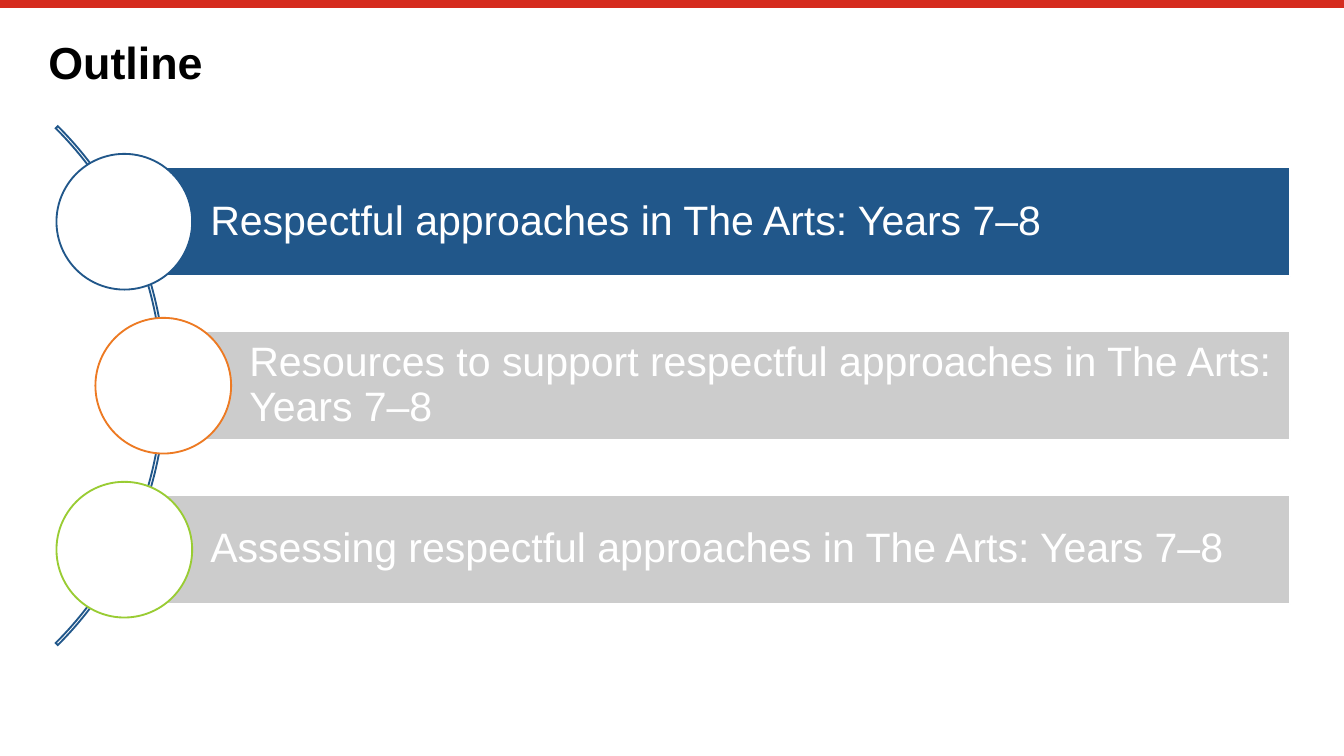
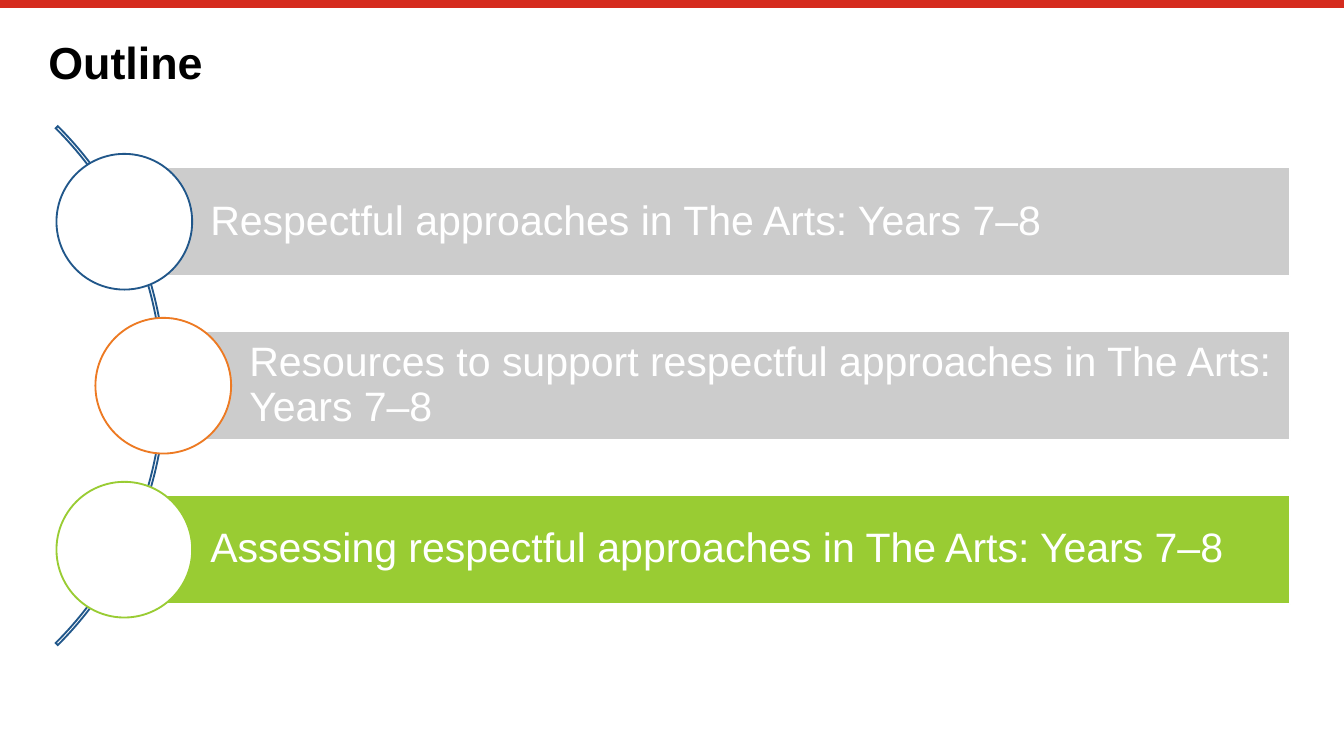
from pptx import Presentation
from pptx.dml.color import RGBColor
from pptx.enum import shapes, text
from pptx.oxml import ns, xmlchemy
from pptx.util import Inches, Pt

RED, BLUE, ORANGE, GREEN = "D52B1E", "21578A", "ED7A23", "99CC33"
GREY, WHITE, BLACK = "CCCCCC", "FFFFFF", "000000"

TOPICS = [
    ("Respectful approaches in The Arts: Years 7–8", BLUE, 0.42),
    ("Resources to support respectful approaches in The Arts: Years 7–8", ORANGE, 0.71),
    ("Assessing respectful approaches in The Arts: Years 7–8", GREEN, 0.42),
]
ACTIVE_TOPICS = [0, 2]
CIRCLE = 1.01
BAR_HEIGHT = 0.81
BAR_RIGHT = 9.6
FIRST_CENTRE = 1.65
PITCH = 1.22


def write(box, words, size, color, bold=False, insets=(0, 0, 0, 0), anchor=text.MSO_ANCHOR.TOP):
    frame = box.text_frame
    frame.word_wrap = True
    frame.vertical_anchor = anchor
    frame.margin_left, frame.margin_top, frame.margin_right, frame.margin_bottom = map(Inches, insets)
    line = frame.paragraphs[0]
    line.text = words
    line.alignment = text.PP_ALIGN.LEFT
    line.line_spacing = 0.9
    line.font.name = "Arial"
    line.font.size = Pt(size)
    line.font.bold = bold
    line.font.color.rgb = RGBColor.from_string(color)


def draw(slide, kind, left, top, width, height, fill, outline):
    shape = slide.shapes.add_shape(kind, *map(Inches, (left, top, width, height)))
    shape.shadow.inherit = False
    if fill:
        shape.fill.solid()
        shape.fill.fore_color.rgb = RGBColor.from_string(fill)
    else:
        shape.fill.background()
    shape.line.color.rgb = RGBColor.from_string(outline)
    shape.line.width = Pt(1)
    return shape


deck = Presentation()
deck.slide_width = Inches(10)
deck.slide_height = deck.slide_width * 9 // 16

for active in ACTIVE_TOPICS:
    slide = deck.slides.add_slide(deck.slide_layouts[6])

    band = slide.shapes.add_connector(
        shapes.MSO_CONNECTOR.STRAIGHT, 0, Inches(0.03), Inches(10), Inches(0.03))
    band.line.color.rgb = RGBColor.from_string(RED)
    band.line.width = Pt(4.2)
    band.element.spPr.append(xmlchemy.OxmlElement("a:effectLst"))

    title = slide.shapes.add_textbox(*map(Inches, (0.36, 0.3, 9.29, 0.39)))
    write(title, "Outline", 24, BLACK, bold=True)

    arc = draw(slide, shapes.MSO_SHAPE.BLOCK_ARC, -4.23, 0.14, 5.46, 5.46, None, BLUE)
    for index, value in enumerate((189, 27, 0.004)):
        arc.adjustments[index] = value
    arc.element.spPr.find(ns.qn("a:ln")).append(xmlchemy.OxmlElement("a:miter"))

    for index, (topic, accent, circle_left) in enumerate(TOPICS):
        centre = FIRST_CENTRE + index * PITCH
        bar_left = circle_left + CIRCLE / 2
        bar = draw(slide, shapes.MSO_SHAPE.RECTANGLE, bar_left, centre - BAR_HEIGHT / 2,
                   BAR_RIGHT - bar_left, BAR_HEIGHT, accent if index == active else GREY, WHITE)
        write(bar, topic, 22, WHITE, insets=(0.64, 0.06, 0.06, 0.06), anchor=text.MSO_ANCHOR.MIDDLE)
        draw(slide, shapes.MSO_SHAPE.OVAL, circle_left, centre - CIRCLE / 2,
             CIRCLE, CIRCLE, WHITE, accent)

deck.save("out.pptx")
